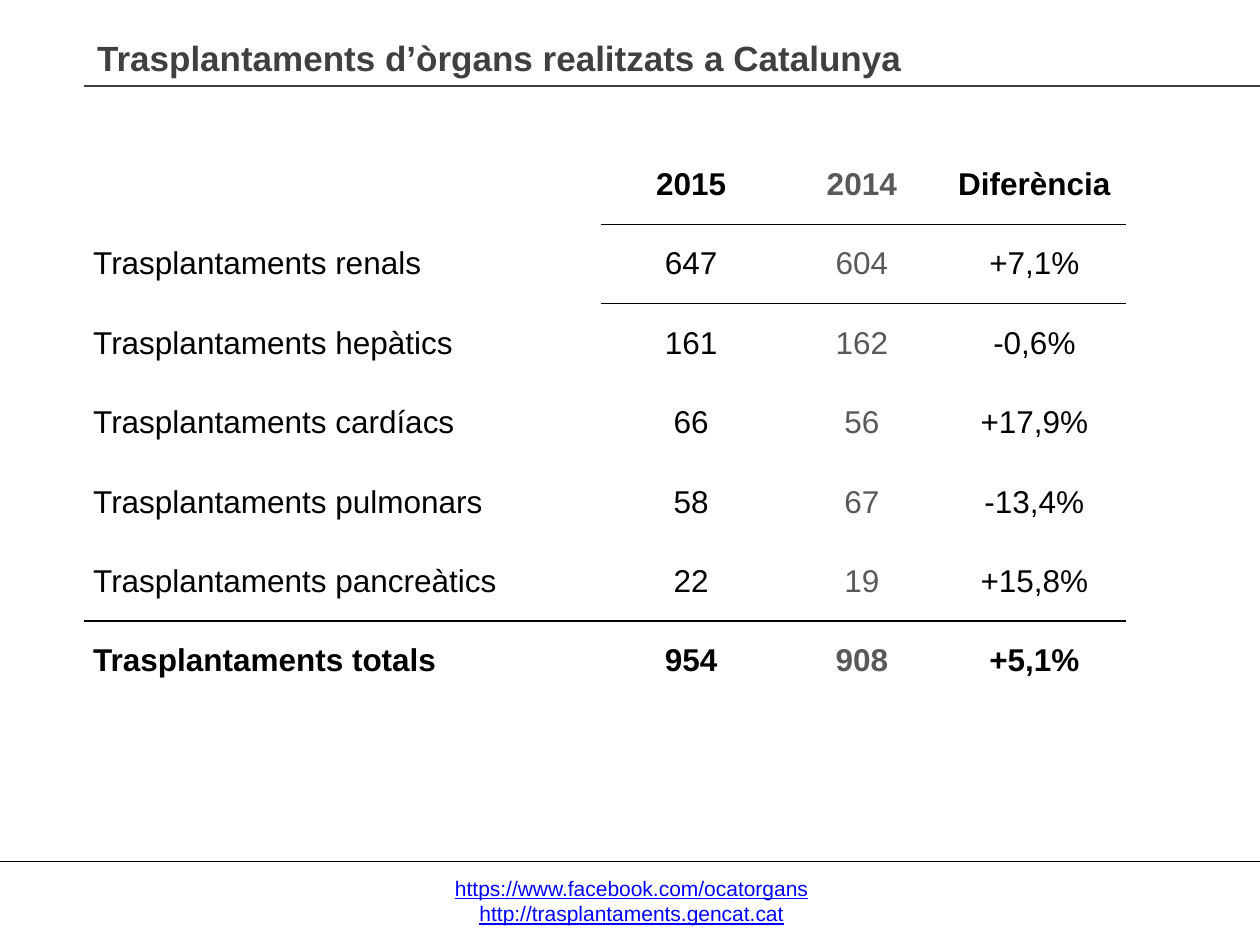
from lxml import etree
from pptx import Presentation
from pptx import util as u
from pptx.dml.color import RGBColor
from pptx.enum import shapes, text
from pptx.oxml import parse_xml
from pptx.oxml.ns import nsdecls, qn

COLORS = {"black": "000000", "dark": "404040", "grey": "595959", "link": "0000FF"}
NO_GRID = "{2D5ABB26-0587-4C30-8999-92F81FD0307C}"
COL_WIDTHS = [4.1, 1.43, 1.28, 1.46]
ROWS = [
    ("", "2015", "2014", "Diferència"),
    ("Trasplantaments renals", "647", "604", "+7,1%"),
    ("Trasplantaments hepàtics", "161", "162", "-0,6%"),
    ("Trasplantaments cardíacs", "66", "56", "+17,9%"),
    ("Trasplantaments pulmonars", "58", "67", "-13,4%"),
    ("Trasplantaments pancreàtics", "22", "19", "+15,8%"),
    ("Trasplantaments totals", "954", "908", "+5,1%"),
]
LINKS = ["https://www.facebook.com/ocatorgans", "http://trasplantaments.gencat.cat"]


def apply(obj, **values):
    for name, value in values.items():
        setattr(obj, name, value)


def write(p, words, color, align, **font):
    p.alignment = align
    r = p.add_run()
    r.text = words
    apply(r.font, name="Arial", **font)
    r.font.color.rgb = RGBColor.from_string(COLORS[color])


def add_rule(s, left, right, y, color, width):
    line = s.shapes.add_connector(
        shapes.MSO_CONNECTOR.STRAIGHT,
        u.Inches(left), u.Inches(y), u.Inches(right), u.Inches(y))
    line.line.color.rgb = RGBColor.from_string(COLORS[color])
    line.line.width = u.Pt(width)
    etree.SubElement(line._element.spPr, qn("a:effectLst"))


def add_title(s, left, top, width, height):
    sp = s.shapes.title
    apply(sp, left=u.Inches(left), top=u.Inches(top),
          width=u.Inches(width), height=u.Inches(height))
    tf = sp.text_frame
    apply(tf, word_wrap=True, auto_size=text.MSO_AUTO_SIZE.NONE,
          vertical_anchor=text.MSO_ANCHOR.MIDDLE)
    write(tf.paragraphs[0], "Trasplantaments d’òrgans realitzats a Catalunya",
          "dark", text.PP_ALIGN.LEFT, size=u.Pt(20), bold=True)
    add_rule(s, left, left + width, top + 0.4, "dark", 1)


def add_border(cell, side):
    cell._tc.get_or_add_tcPr().insert(0, parse_xml(
        f'<a:ln{side} {nsdecls("a")} w="12700"><a:solidFill>'
        f'<a:srgbClr val="{COLORS["black"]}"/></a:solidFill></a:ln{side}>'))


def add_figures(s, left, top, width, height):
    frame = s.shapes.add_table(len(ROWS), len(COL_WIDTHS), u.Inches(left),
                               u.Inches(top), u.Inches(width), u.Inches(height))
    table = frame.table
    apply(table, first_row=False, horz_banding=False)
    table._tbl.tblPr.find(qn("a:tableStyleId")).text = NO_GRID
    for column, col_width in zip(table.columns, COL_WIDTHS):
        column.width = u.Inches(col_width)
    last = len(ROWS) - 1
    for i, row in enumerate(ROWS):
        table.rows[i].height = u.Inches(height / len(ROWS))
        for j, words in enumerate(row):
            cell = table.cell(i, j)
            apply(cell, margin_left=u.Inches(0.07), margin_right=u.Inches(0.07),
                  margin_top=0, margin_bottom=0,
                  vertical_anchor=text.MSO_ANCHOR.MIDDLE)
            cell.fill.background()
            if words:
                write(cell.text_frame.paragraphs[0], words,
                      "grey" if j == 2 else "black",
                      text.PP_ALIGN.CENTER if j else text.PP_ALIGN.LEFT,
                      size=u.Pt(18), bold=i in (0, last))
            if i == last - 1 or (i == 0 and j > 0):
                add_border(cell, "B")
            if i == last or (i == 1 and j > 0):
                add_border(cell, "T")


def add_footer(s, left, top, width, height):
    add_rule(s, 0, 10, top - 0.06, "black", 0.75)
    box = s.shapes.add_textbox(u.Inches(left), u.Inches(top),
                               u.Inches(width), u.Inches(height))
    tf = box.text_frame
    apply(tf, word_wrap=False, auto_size=text.MSO_AUTO_SIZE.SHAPE_TO_FIT_TEXT)
    for i, link in enumerate(LINKS):
        p = tf.add_paragraph() if i else tf.paragraphs[0]
        write(p, link, "link", text.PP_ALIGN.CENTER, size=u.Pt(12), underline=True)


def main():
    prs = Presentation()
    apply(prs, slide_width=u.Inches(10), slide_height=u.Inches(7.5))
    s = prs.slides.add_slide(prs.slide_layouts[5])
    add_footer(s, 3.5, 6.9, 3.03, 0.5)
    add_figures(s, 0.67, 1.15, sum(COL_WIDTHS), 4.41)
    add_title(s, 0.67, 0.28, 9.33, 0.36)
    prs.save("out.pptx")


if __name__ == "__main__":
    main()
